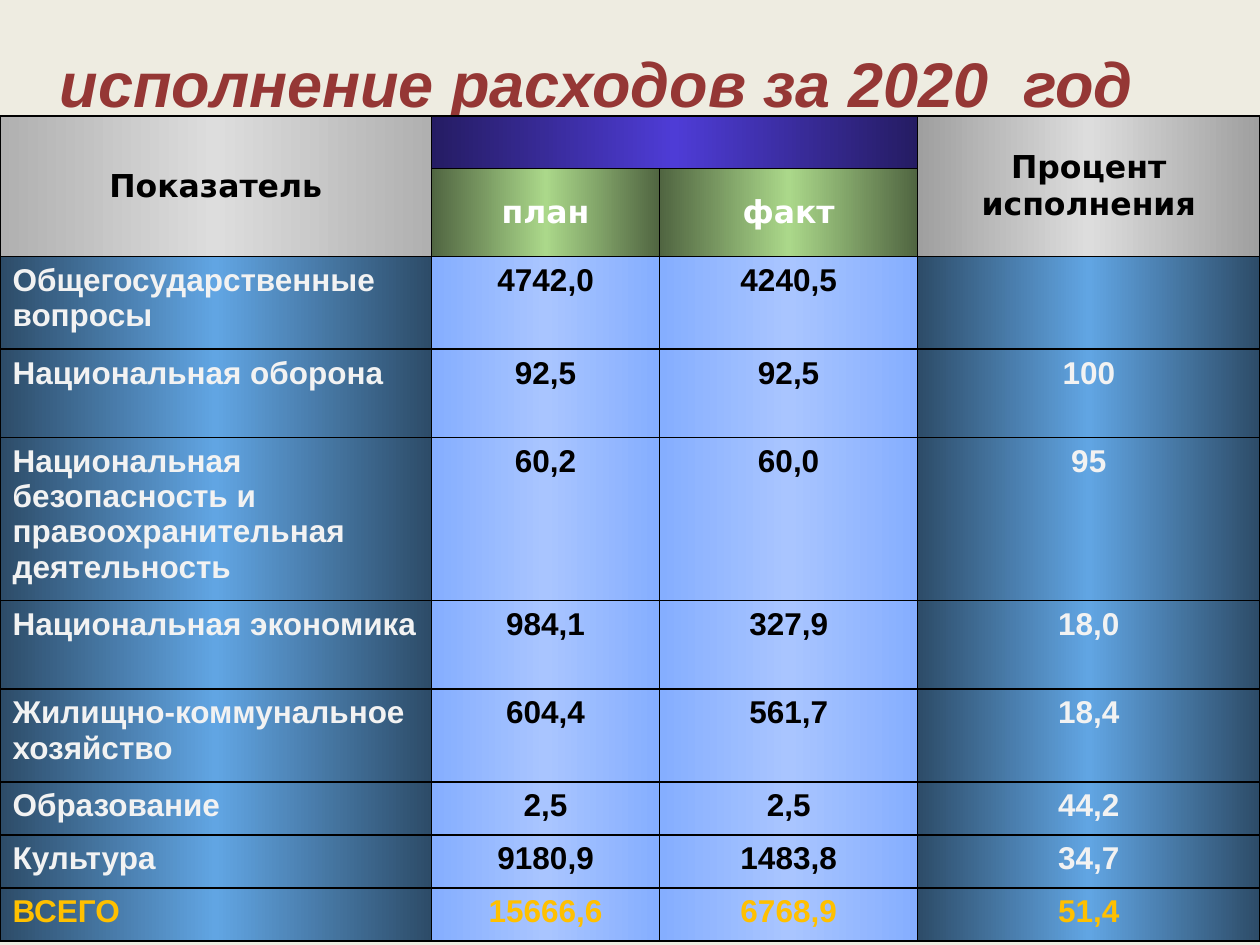
from lxml.etree import SubElement as Sub
from pptx import Presentation
from pptx.dml.color import RGBColor
from pptx.enum.text import MSO_ANCHOR as Anchor, PP_ALIGN as Align
from pptx.oxml.ns import qn
from pptx.util import Cm, Pt

COLS = [8.7, 4.6, 5.2, 6.9]
ROWS = [1.06, 1.77, 1.87, 1.78, 3.29, 1.78, 1.87, 1.07, 1.07, 1.07]
GREY, SILVER = ("B0B0B0", "DDDDDD"), ("9F9F9F", "DDDDDD")
VIOLET, GREEN = ("251C63", "4E3CD6"), ("506541", "ABD88A")
STEEL, SKY = ("2D4C68", "61A5E3"), ("85AEFF", "A9C5FF")
HEADS = [
    [("Показатель", GREY), ("", VIOLET), ("", VIOLET), ("Процент исполнения", SILVER)],
    [("", GREY), ("план", GREEN), ("факт", GREEN), ("", SILVER)],
]
ITEMS = [
    ("Общегосударственные вопросы", "4742,0", "4240,5", ""),
    ("Национальная оборона", "92,5", "92,5", "100"),
    ("Национальная безопасность и правоохранительная деятельность", "60,2", "60,0", "95"),
    ("Национальная экономика", "984,1", "327,9", "18,0"),
    ("Жилищно-коммунальное хозяйство", "604,4", "561,7", "18,4"),
    ("Образование", "2,5", "2,5", "44,2"),
    ("Культура", "9180,9", "1483,8", "34,7"),
    ("ВСЕГО", "15666,6", "6768,9", "51,4"),
]


def tint(code):
    """Turn a hex string into a colour."""
    return RGBColor.from_string(code)


def write(frame, text, color="000000", size=18, font="Arial", align=Align.CENTER, italic=None):
    """Put bold text into a frame and return its run."""
    para = frame.paragraphs[0]
    para.alignment = align
    run = para.add_run()
    run.text = text
    face = run.font
    face.name, face.size, face.bold, face.italic = font, Pt(size), True, italic
    face.color.rgb = tint(color)
    return run


def paint(parent, code):
    """Add a solid fill to an XML element."""
    Sub(Sub(parent, qn("a:solidFill")), qn("a:srgbClr"), val=code)


def dress(cell, shade):
    """Give a cell black borders and a mirrored gradient."""
    props = cell._tc.get_or_add_tcPr()
    for side in "LRTB":
        paint(Sub(props, qn(f"a:ln{side}"), w=str(Pt(1))), "000000")
    grad = Sub(props, qn("a:gradFill"), rotWithShape="1")
    stops = Sub(grad, qn("a:gsLst"))
    edge, core = shade
    for pos, code in ((0, edge), (50000, core), (100000, edge)):
        Sub(Sub(stops, qn("a:gs"), pos=str(pos)), qn("a:srgbClr"), val=code)
    Sub(grad, qn("a:lin"), ang="0", scaled="1")


def add_title(slide):
    """Place and format the title."""
    title = slide.shapes.title
    title.left, title.top, title.width, title.height = Cm(0.51), Cm(0.74), Cm(23.39), Cm(1.8)
    frame = title.text_frame
    frame.word_wrap, frame.vertical_anchor = True, Anchor.BOTTOM
    run = write(frame, "исполнение расходов за 2020  год ", color="953735", size=36, italic=True)
    line = Sub(run.font._element, qn("a:ln"), w=str(Pt(0.75)))
    paint(line, "FF99FF")
    run.font._element.insert(0, line)


def fill_heads(table):
    """Fill the two header rows and merge their cells."""
    for row, heads in enumerate(HEADS):
        for col, (text, shade) in enumerate(heads):
            cell = table.cell(row, col)
            dress(cell, shade)
            cell.vertical_anchor = Anchor.MIDDLE
            if text:
                color = "FFFFFF" if shade == GREEN else "000000"
                write(cell.text_frame, text, color=color, font="DejaVu Sans")
    for start, end in (((0, 0), (1, 0)), ((0, 1), (0, 2)), ((0, 3), (1, 3))):
        table.cell(*start).merge(table.cell(*end))


def fill_items(table):
    """Fill the spending rows and the total."""
    for row, item in enumerate(ITEMS, len(HEADS)):
        for col, text in enumerate(item):
            cell = table.cell(row, col)
            outer = col in (0, 3)
            dress(cell, STEEL if outer else SKY)
            color = "F2F2F2" if outer else "000000"
            if item is ITEMS[-1]:
                color = "FFC000"
            if text:
                align = Align.CENTER if col else Align.LEFT
                write(cell.text_frame, text, color=color, align=align)


def add_grid(slide):
    """Add the spending table."""
    table = slide.shapes.add_table(
        len(ROWS), len(COLS), Cm(0), Cm(2.34), Cm(sum(COLS)), Cm(sum(ROWS))
    ).table
    table.first_row = table.horz_banding = False
    for col, width in zip(table.columns, COLS):
        col.width = Cm(width)
    for row, height in zip(table.rows, ROWS):
        row.height = Cm(height)
    fill_heads(table)
    fill_items(table)


def main():
    """Build the slide and save it."""
    deck = Presentation()
    deck.slide_width, deck.slide_height = Cm(25.4), Cm(19.05)
    slide = deck.slides.add_slide(deck.slide_layouts[5])
    back = slide.background.fill
    back.solid()
    back.fore_color.rgb = tint("EEECE1")
    add_title(slide)
    add_grid(slide)
    deck.save("out.pptx")


if __name__ == "__main__":
    main()
